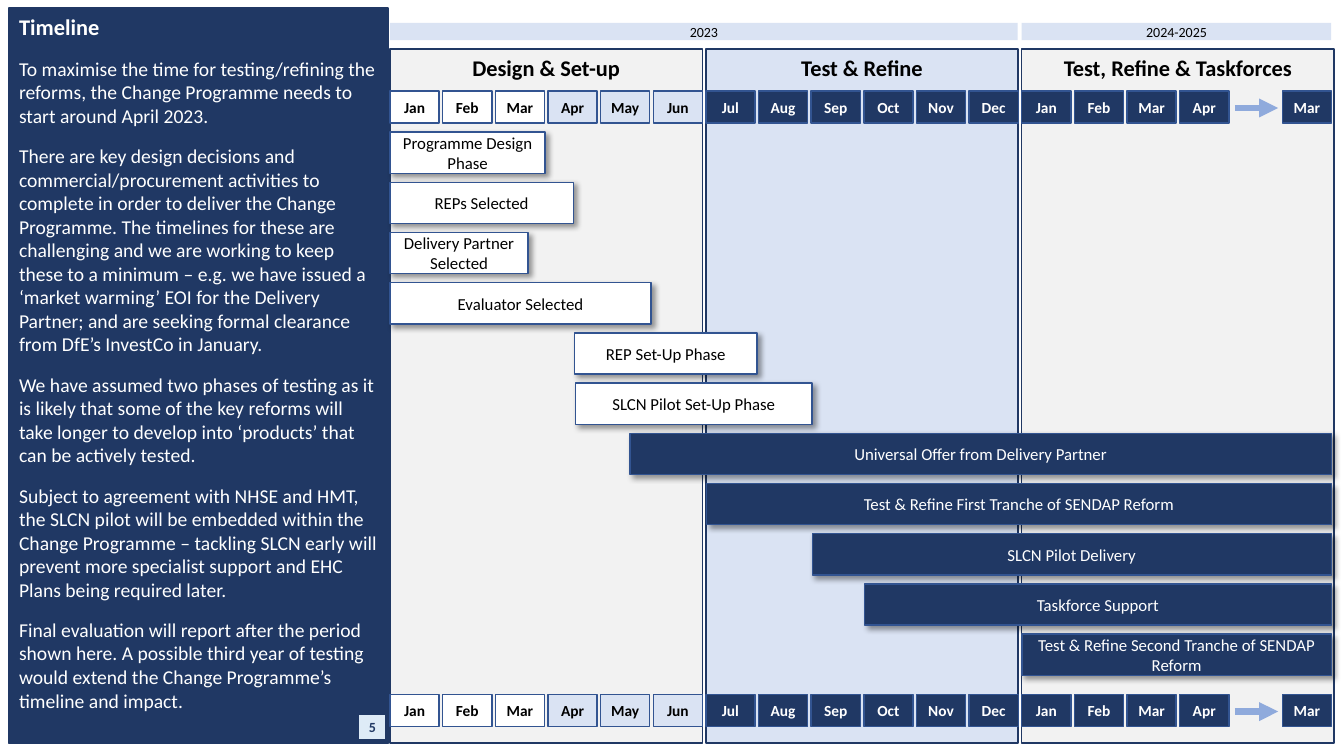
"""Build the Change Programme timeline slide."""
from lxml.etree import SubElement
from pptx import Presentation
from pptx.dml.color import RGBColor
from pptx.enum.shapes import MSO_CONNECTOR, MSO_SHAPE
from pptx.enum.text import MSO_ANCHOR as ANCHOR, MSO_AUTO_SIZE, PP_ALIGN as ALIGN
from pptx.oxml.ns import qn
from pptx.util import Cm, Pt

NAVY, BLUE, PALE, GREY = "203864", "325491", "DAE3F3", "F2F2F2"
ICE, ARROW, WHITE, BLACK = "DEEBF7", "8FAADC", "FFFFFF", "000000"

TITLE = "Timeline"
NOTES = [
    "To maximise the time for testing/refining the reforms, the Change Programme "
    "needs to start around April 2023.",
    "There are key design decisions and commercial/procurement activities to complete "
    "in order to deliver the Change Programme. The timelines for these are challenging "
    "and we are working to keep these to a minimum – e.g. we have issued a ‘market "
    "warming’ EOI for the Delivery Partner; and are seeking formal clearance from "
    "DfE’s InvestCo in January.",
    "We have assumed two phases of testing as it is likely that some of the key reforms "
    "will take longer to develop into ‘products’ that can be actively tested.",
    "Subject to agreement with NHSE and HMT, the SLCN pilot will be embedded within the "
    "Change Programme – tackling SLCN early will prevent more specialist support and "
    "EHC Plans being required later.",
    "Final evaluation will report after the period shown here. A possible third year of "
    "testing would extend the Change Programme’s timeline and impact.",
]
PAGE = "5"
PHASES = [("Design & Set-up", GREY), ("Test & Refine", PALE),
          ("Test, Refine & Taskforces", GREY)]
MONTHS = ("Jan Feb Mar Apr May Jun Jul Aug Sep Oct Nov Dec "
          "Jan Feb Mar Apr Mar").split()

LEFT, RIGHT, YEAR = 9.83, 33.55, 15.92
STEP = YEAR / 12
MONTH_W, MONTH_H = 1.24, 0.81
MONTH_TOPS = (2.29, 17.5)
LAST_SLOT = 16.95
BAR_TOP, BAR_STEP, BAR_H = 3.33, 1.265, 1.04
YEARS = [("2023", LEFT, 15.82), ("2024-2025", LEFT + YEAR, 7.8)]
SETUP_BARS = [
    ("Programme Design Phase", LEFT, 13.74),
    ("REPs Selected", LEFT, 14.45),
    ("Delivery Partner Selected", LEFT, 13.31),
    ("Evaluator Selected", LEFT, 16.41),
    ("REP Set-Up Phase", 14.48, 19.08),
    ("SLCN Pilot Set-Up Phase", 14.5, 20.47),
]
DELIVERY_BARS = [
    ("Universal Offer from Delivery Partner", 15.88, RIGHT),
    ("Test & Refine First Tranche of SENDAP Reform", 17.81, RIGHT),
    ("SLCN Pilot Delivery", 20.47, RIGHT),
    ("Taskforce Support", 21.79, RIGHT),
    ("Test & Refine Second Tranche of SENDAP Reform", 25.76, RIGHT),
]


def rgb(value):
    return RGBColor.from_string(value)


def paint(sp, fill, line):
    sp.fill.solid()
    sp.fill.fore_color.rgb = rgb(fill)
    if line:
        sp.line.color.rgb = rgb(line)
        sp.line.width = Pt(1)
    else:
        sp.line.fill.background()


def style(p, size, color, bold=False, align=ALIGN.CENTER):
    p.alignment = align
    p.font.name, p.font.size, p.font.bold = "Calibri", Pt(size), bold
    p.font.color.rgb = rgb(color)


def add_box(s, text, x, y, w, h, fill, line, size, color,
            bold=False, anchor=ANCHOR.MIDDLE, inset=0.0):
    sp = s.shapes.add_shape(MSO_SHAPE.RECTANGLE, Cm(x), Cm(y), Cm(w), Cm(h))
    sp.shadow.inherit = False
    paint(sp, fill, line)
    tf = sp.text_frame
    tf.word_wrap, tf.vertical_anchor = True, anchor
    tf.margin_left = tf.margin_right = Cm(inset)
    tf.margin_top = tf.margin_bottom = Cm(inset / 2)
    tf.text = text
    style(tf.paragraphs[0], size, color, bold)
    return sp


def add_shadow(sp):
    effects = sp._element.spPr.find(qn("a:effectLst"))
    shadow = SubElement(effects, qn("a:outerShdw"), blurRad="50800", dist="38100",
                        dir="2700000", algn="tl", rotWithShape="0")
    color = SubElement(shadow, qn("a:srgbClr"), val=BLACK)
    SubElement(color, qn("a:alpha"), val="40000")


def add_arrow(s, x1, x2, y):
    cn = s.shapes.add_connector(MSO_CONNECTOR.STRAIGHT, Cm(x1), Cm(y), Cm(x2), Cm(y))
    cn.line.color.rgb = rgb(ARROW)
    cn.line.width = Pt(4.5)
    SubElement(cn.line._get_or_add_ln(), qn("a:tailEnd"), type="triangle")
    SubElement(cn._element.spPr, qn("a:effectLst"))


def add_sidebar(s):
    title = s.shapes.title
    title.left, title.top, title.width, title.height = Cm(0.23), Cm(0.2), Cm(9.55), Cm(18.54)
    paint(title, NAVY, NAVY)
    tf = title.text_frame
    tf.text, tf.vertical_anchor = TITLE, ANCHOR.TOP
    tf.word_wrap, tf.auto_size = True, MSO_AUTO_SIZE.NONE
    style(tf.paragraphs[0], 16, WHITE, True, ALIGN.LEFT)

    tf = s.shapes.add_textbox(Cm(0.23), Cm(1.3), Cm(9.55), Cm(16.65)).text_frame
    tf.word_wrap, tf.margin_bottom = True, 0
    tf.text = "\n".join(NOTES)
    for i, p in enumerate(tf.paragraphs):
        style(p, 14, WHITE, align=ALIGN.LEFT)
        p.space_before = Pt(12 if i else 0)
    add_box(s, PAGE, 9.04, 18.01, 0.69, 0.64, ICE, NAVY, 10, NAVY, True)


def add_months(s, top):
    for i, month in enumerate(MONTHS):
        slot = LAST_SLOT if i == len(MONTHS) - 1 else i
        fill = WHITE if i < 3 else PALE if i < 6 else NAVY
        add_box(s, month, LEFT + slot * STEP, top, MONTH_W, MONTH_H, fill, BLUE,
                11, BLACK if i < 6 else WHITE, True)
    add_arrow(s, 31.12, 32.21, top + 0.43)


def main():
    prs = Presentation()
    prs.slide_width, prs.slide_height = Cm(33.87), Cm(19.05)
    s = prs.slides.add_slide(prs.slide_layouts[5])
    add_sidebar(s)
    for i, (phase, fill) in enumerate(PHASES):
        add_box(s, phase, LEFT + i * YEAR / 2, 1.24, 7.87, 17.48, fill, NAVY,
                16, BLACK, True, ANCHOR.TOP, 0.25)
    for year, x, w in YEARS:
        add_box(s, year, x, 0.58, w, 0.43, PALE, None, 10, BLACK)
    for top in MONTH_TOPS:
        add_months(s, top)
    for i, (text, start, end) in enumerate(SETUP_BARS + DELIVERY_BARS):
        fill, color = (WHITE, BLACK) if i < len(SETUP_BARS) else (NAVY, WHITE)
        add_shadow(add_box(s, text, start, BAR_TOP + i * BAR_STEP, end - start, BAR_H,
                           fill, BLUE, 12, color, inset=0.25))
    prs.save("out.pptx")


if __name__ == "__main__":
    main()
